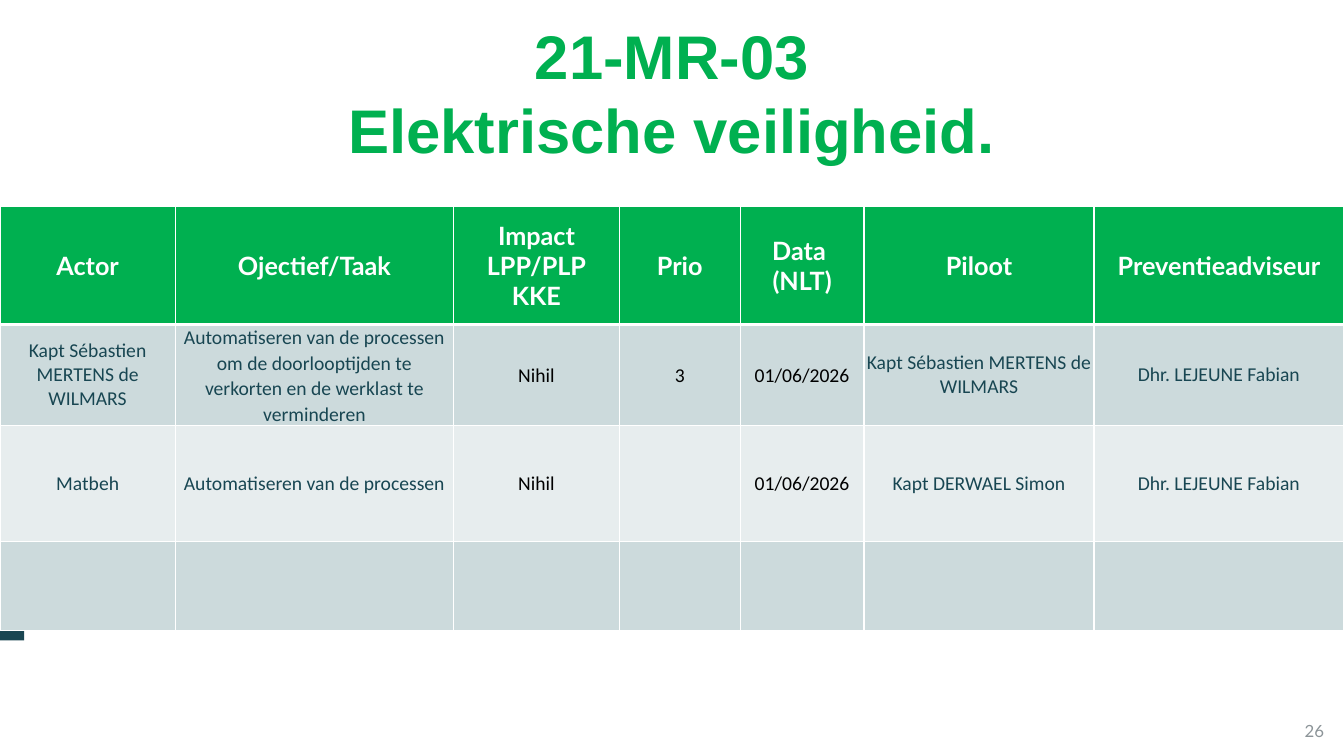
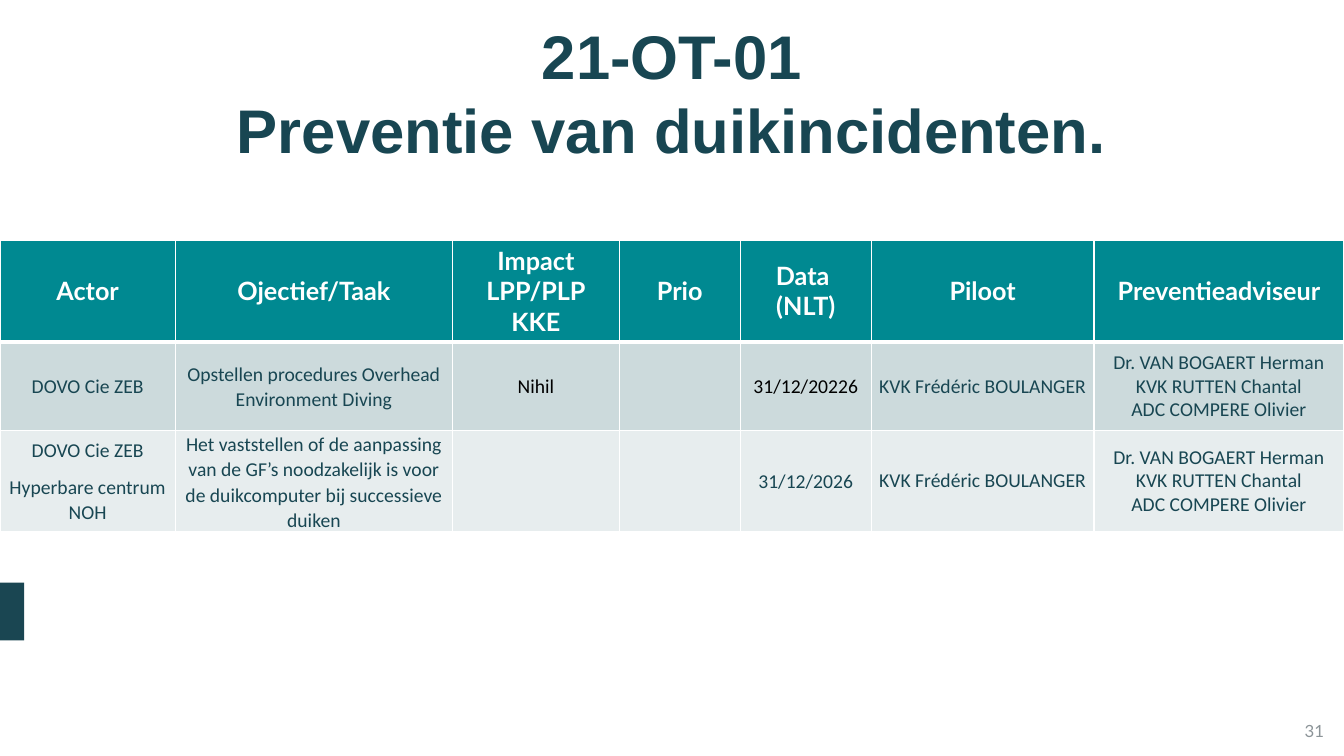
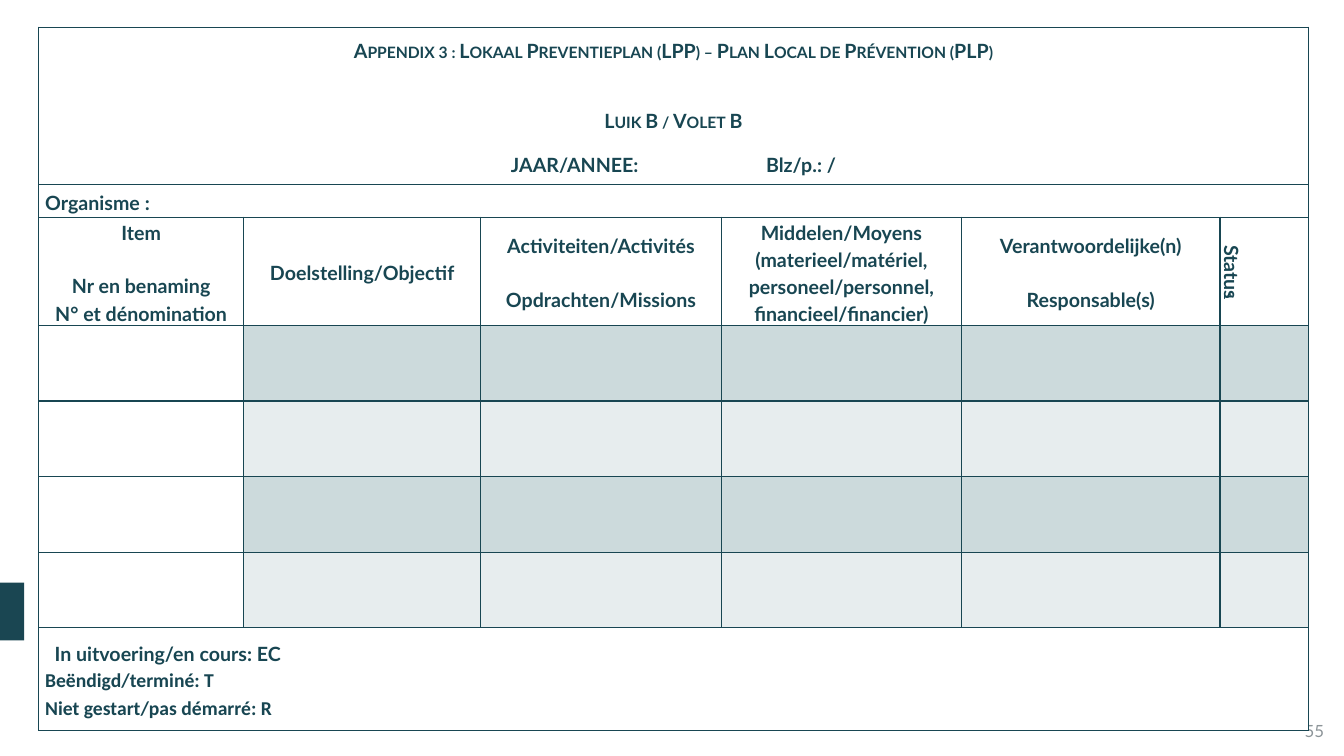
from copy import deepcopy
from dataclasses import dataclass, replace

from pptx import Presentation
from pptx.dml.color import RGBColor
from pptx.enum.shapes import MSO_SHAPE
from pptx.enum.text import MSO_ANCHOR, PP_ALIGN
from pptx.oxml import parse_xml
from pptx.oxml.ns import nsdecls, qn
from pptx.util import Pt

PX = 9525


@dataclass(frozen=True)
class Look:
    """Format of one paragraph and of the cell or box it opens."""
    size: int
    font: str
    color: str
    bold: bool = False
    align: PP_ALIGN = PP_ALIGN.CENTER
    line: float = 1.0
    before: int = 0
    after: int = 0
    insets: tuple = (10, 5)
    margin: int = 0
    tab: int = 0
    small_caps: bool = False
    vertical: bool = False
    note: str = ""


class Theme:
    """Colours and type styles of the deck."""
    ink, white, bar = "184652", "FFFFFF", "1A4652"
    green, teal = "00B050", "008991"
    dark_band, light_band = "CCDADC", "E7EDEE"
    title = Look(44, "Arial", ink, bold=True)
    number = Look(12, "Lato", "8C9498", align=PP_ALIGN.RIGHT)
    header = Look(18, "Lato", white, bold=True)
    name = Look(14, "Calibri", ink, insets=(1, 0))
    task = replace(name, line=1.07, after=8, insets=(5, 0))
    fact = replace(task, color="000000")
    form = Look(14, "Lato", ink, bold=True, line=1.15, insets=(6, 0))
    form_gap = replace(form, before=19)
    form_left = replace(form, align=PP_ALIGN.LEFT)
    form_code = replace(form_left, font="Calibri")
    form_caps = replace(form, small_caps=True)


class Deck:
    """Presentation with the current page and its elements."""

    def __init__(self, theme):
        self.theme = theme
        self.file = Presentation()
        self.file.slide_width, self.file.slide_height = 1280 * PX, 720 * PX

    def page(self, number):
        """Start a page with its number and side bar."""
        self.slide = self.file.slides.add_slide(self.file.slide_layouts[6])
        self.text((983, 677, 288, 38), self.theme.number, number, MSO_ANCHOR.MIDDLE)
        bar = self.slide.shapes.add_shape(MSO_SHAPE.RECTANGLE, *self.scale(0, 555, 23, 55))
        bar.shadow.inherit = False
        bar.line.fill.background()
        self.paint(bar, self.theme.bar)

    def scale(self, *lengths):
        """Turn px into EMU."""
        return [length * PX for length in lengths]

    def paint(self, target, color):
        """Fill a shape or cell."""
        target.fill.solid()
        target.fill.fore_color.rgb = RGBColor.from_string(color)

    def inset(self, target, look):
        """Set the inner margins of a frame or cell."""
        across, down = self.scale(*look.insets)
        margins = {"margin_left": across, "margin_right": across,
                   "margin_top": down, "margin_bottom": down}
        for key, value in margins.items():
            setattr(target, key, value)

    def text(self, place, look, words, anchor=MSO_ANCHOR.TOP):
        """Add a text box."""
        frame = self.slide.shapes.add_textbox(*self.scale(*place)).text_frame
        frame.word_wrap = True
        frame.vertical_anchor = anchor
        self.inset(frame, look)
        self.set_para(frame.paragraphs[0], look, words)

    def title(self, words, color):
        """Add the page title."""
        self.text((0, 12, 1280, 152), replace(self.theme.title, color=color), words)

    def set_para(self, para, look, words):
        """Put words in one paragraph and format it."""
        para.text = words
        if look.note:
            para.add_run().text = look.note
        properties = para._p.get_or_add_pPr()
        if look.margin:
            properties.set("marL", str(look.margin * PX))
            properties.set("indent", "0")
        if look.tab:
            properties.append(parse_xml(
                f'<a:tabLst {nsdecls("a")}><a:tab pos="{look.tab * PX}" algn="l"/></a:tabLst>'))
        layout = {"alignment": look.align, "line_spacing": look.line,
                  "space_before": Pt(look.before), "space_after": Pt(look.after)}
        for key, value in layout.items():
            setattr(para, key, value)
        for span in para.runs:
            for key, value in {"size": Pt(look.size), "name": look.font, "bold": look.bold}.items():
                setattr(span.font, key, value)
            span.font.color.rgb = RGBColor.from_string(look.color)
            if look.small_caps:
                span._r.get_or_add_rPr().set("cap", "small")
        for line_break in para._p.findall(qn("a:br")):
            line_break.append(deepcopy(para.runs[0]._r.rPr))
        if look.note:
            para.runs[-1]._r.get_or_add_rPr().set("baseline", "30000")

    def border(self, cell, color, top=1, bottom=1):
        """Draw the four borders of a cell."""
        properties = cell._tc.get_or_add_tcPr()
        widths = {"lnL": 1, "lnR": 1, "lnT": top, "lnB": bottom}
        for index, (side, width) in enumerate(widths.items()):
            properties.insert(index, parse_xml(
                f'<a:{side} {nsdecls("a")} w="{Pt(width)}"><a:solidFill>'
                f'<a:srgbClr val="{color}"/></a:solidFill></a:{side}>'))

    def table(self, corner, widths, heights, rows, fill, edge, rule=1):
        """Add a table whose cells are lists of (look, words) paragraphs."""
        place = self.scale(*corner, sum(widths), sum(heights))
        table = self.slide.shapes.add_table(len(heights), len(widths), *place).table
        table.horz_banding = False
        for column, width in zip(table.columns, widths):
            column.width = width * PX
        for row, height in zip(table.rows, heights):
            row.height = height * PX
        for row, entries in enumerate(rows):
            for column in range(len(widths)):
                cell = table.cell(row, column)
                self.paint(cell, fill(row, column))
                self.border(cell, edge, rule if row == 1 else 1, rule if row == 0 else 1)
            if len(entries) == 1:
                table.cell(row, 0).merge(table.cell(row, len(widths) - 1))
            for column, paragraphs in enumerate(entries):
                if paragraphs:
                    self.fill_cell(table.cell(row, column), paragraphs)

    def fill_cell(self, cell, paragraphs):
        """Set the paragraphs of a cell."""
        first = paragraphs[0][0]
        cell.vertical_anchor = MSO_ANCHOR.MIDDLE
        self.inset(cell, first)
        if first.vertical:
            cell._tc.get_or_add_tcPr().set("vert", "vert")
        frame = cell.text_frame
        for index, (look, words) in enumerate(paragraphs):
            para = frame.add_paragraph() if index else frame.paragraphs[0]
            self.set_para(para, look, words)

    def band(self, row):
        """Give the band colour of a row."""
        return self.theme.dark_band if row % 2 else self.theme.light_band

    def plan(self, top, widths, heights, color, body):
        """Add an action plan table under the shared header."""
        labels = ("Actor", "Ojectief/Taak", "Impact\vLPP/PLP\vKKE", "Prio",
                  "Data \v(NLT)", "Piloot", "Preventieadviseur")
        header = [[(self.theme.header, label)] for label in labels]
        self.table((0, top), widths, heights, [header, *body],
                   lambda row, column: self.band(row) if row else color,
                   self.theme.white, rule=3)


def electrical_safety(deck):
    """Build the page on electrical safety."""
    theme = deck.theme
    nihil, date = [(theme.fact, "Nihil")], [(theme.fact, "01/06/2026")]
    captain = [(theme.name, "Kapt Sébastien MERTENS de WILMARS")]
    adviser = [(theme.name, "Dhr. LEJEUNE Fabian")]
    deck.page("26")
    deck.title("21-MR-03\vElektrische veiligheid.", theme.green)
    deck.plan(197, (167, 265, 158, 115, 118, 219, 238), (112, 85, 111, 85), theme.green, [
        [captain,
         [(theme.task, "Automatiseren van de processen om de doorlooptijden te "
                       "verkorten en de werklast te verminderen")],
         nihil, [(theme.fact, "3")], date, captain, adviser],
        [[(theme.task, "Matbeh")], [(theme.task, "Automatiseren van de processen")],
         nihil, [], date, [(theme.name, "Kapt DERWAEL Simon")], adviser],
        [],
    ])


def diving_incidents(deck):
    """Build the page on diving incidents."""
    theme = deck.theme
    company = (theme.task, "DOVO Cie ZEB")
    pilot = [(theme.name, "KVK Frédéric BOULANGER")]
    advisers = [(theme.name, "Dr. VAN BOGAERT Herman\vKVK RUTTEN Chantal\vADC COMPERE Olivier")]
    deck.page("31")
    deck.title("21-OT-01\vPreventie van duikincidenten.", theme.ink)
    deck.plan(229, (167, 264, 159, 115, 125, 212, 238), (92, 85, 95), theme.teal, [
        [[company], [(theme.task, "Opstellen procedures Overhead Environment Diving")],
         [(theme.fact, "Nihil")], [], [(theme.fact, "31/12/20226")], pilot, advisers],
        [[company, (theme.task, "Hyperbare centrum NOH")],
         [(theme.task, "Het vaststellen of de aanpassing van de GF’s noodzakelijk is voor "
                       "de duikcomputer bij successieve duiken")],
         [], [], [(theme.task, "31/12/2026")], pilot, advisers],
    ])


def prevention_form(deck):
    """Build the page with the blank prevention form."""
    theme = deck.theme
    form, gap = theme.form, theme.form_gap
    heading = [
        (theme.form_caps, "Appendix 3 : Lokaal Preventieplan (LPP) – Plan Local de Prévention (PLP)"),
        (replace(theme.form_caps, before=31, after=12), "Luik B / Volet B"),
        (replace(form, tab=243), "JAAR/ANNEE:\tBlz/p.: /"),
    ]
    labels = [
        [(form, "Item"), (gap, "Nr en benaming"), (form, "N° et dénomination")],
        [(form, "Doelstelling/Objectif")],
        [(form, "Activiteiten/Activités"), (gap, "Opdrachten/Missions")],
        [(form, "Middelen/Moyens"),
         (form, "(materieel/matériel, personeel/personnel, financieel/financier)")],
        [(form, "Verantwoordelijke(n)"), (gap, "Responsable(s)")],
        [(replace(form, vertical=True, margin=8, note="1"), "Status")],
    ]
    legend = [
        (replace(theme.form_left, margin=9), "In uitvoering/en cours: EC"),
        (theme.form_code, "Beëndigd/terminé: T"),
        (theme.form_code, "Niet gestart/pas démarré: R"),
    ]
    blanks = [[]] * 4
    rows = [[heading], [[(theme.form_left, "Organisme :")]], labels, *blanks, [legend]]
    deck.page("55")
    deck.table((37, 26), (195, 226, 229, 229, 246, 84), (150, 31, 88, *[72] * 4, 98), rows,
               lambda row, column: deck.band(row) if column and 2 < row < 7 else theme.white,
               theme.ink)


def main():
    """Build and save the deck."""
    deck = Deck(Theme())
    for build in (electrical_safety, diving_incidents, prevention_form):
        build(deck)
    deck.file.save("out.pptx")


if __name__ == "__main__":
    main()
